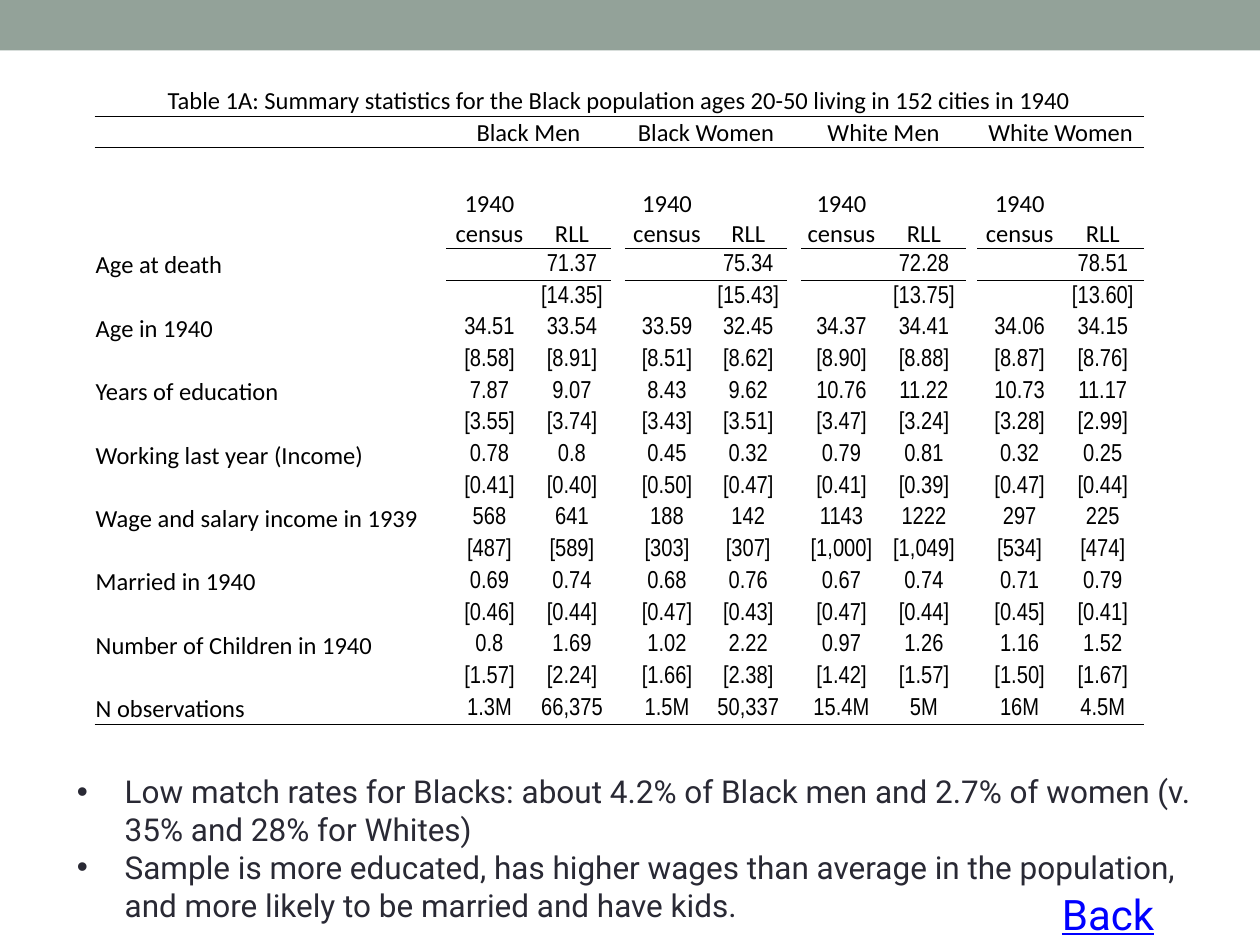
from lxml.etree import SubElement
from pptx import Presentation
from pptx.dml.color import RGBColor
from pptx.enum.shapes import MSO_SHAPE
from pptx.enum.text import MSO_ANCHOR, MSO_AUTO_SIZE, PP_ALIGN
from pptx.oxml import parse_xml
from pptx.oxml.ns import nsdecls, qn
from pptx.util import Inches, Pt

THEME = {
    "band": RGBColor.from_string("93A299"),
    "rule": "000000",
    "rule_pt": 0.5,
    "label": {"name": "Calibri", "size": Pt(14), "color": RGBColor(0, 0, 0)},
    "number": {"name": "Arial Narrow", "size": Pt(14), "color": RGBColor(0, 0, 0)},
    "bullet": {"name": "Roboto", "size": Pt(18), "color": RGBColor.from_string("292934")},
    "back": {"name": "Roboto", "size": Pt(24), "color": RGBColor.from_string("0000FF"),
             "underline": True},
}
NO_GRID_STYLE = "{2D5ABB26-0587-4C30-8999-92F81FD0307C}"

CAPTION = "Table 1A: Summary statistics for the Black population ages 20-50 living in 152 cities in 1940"
GROUPS = ["Black Men", "Black Women", "White Men", "White Women"]
SOURCES = ["1940 census", "RLL"]
STATS = [
    ("Age at death", ["", "71.37", "", "75.34", "", "72.28", "", "78.51"]),
    ("", ["", "[14.35]", "", "[15.43]", "", "[13.75]", "", "[13.60]"]),
    ("Age in 1940", ["34.51", "33.54", "33.59", "32.45", "34.37", "34.41", "34.06", "34.15"]),
    ("", ["[8.58]", "[8.91]", "[8.51]", "[8.62]", "[8.90]", "[8.88]", "[8.87]", "[8.76]"]),
    ("Years of education", ["7.87", "9.07", "8.43", "9.62", "10.76", "11.22", "10.73", "11.17"]),
    ("", ["[3.55]", "[3.74]", "[3.43]", "[3.51]", "[3.47]", "[3.24]", "[3.28]", "[2.99]"]),
    ("Working last year (Income)", ["0.78", "0.8", "0.45", "0.32", "0.79", "0.81", "0.32", "0.25"]),
    ("", ["[0.41]", "[0.40]", "[0.50]", "[0.47]", "[0.41]", "[0.39]", "[0.47]", "[0.44]"]),
    ("Wage and salary income in 1939", ["568", "641", "188", "142", "1143", "1222", "297", "225"]),
    ("", ["[487]", "[589]", "[303]", "[307]", "[1,000]", "[1,049]", "[534]", "[474]"]),
    ("Married in 1940", ["0.69", "0.74", "0.68", "0.76", "0.67", "0.74", "0.71", "0.79"]),
    ("", ["[0.46]", "[0.44]", "[0.47]", "[0.43]", "[0.47]", "[0.44]", "[0.45]", "[0.41]"]),
    ("Number of Children in 1940", ["0.8", "1.69", "1.02", "2.22", "0.97", "1.26", "1.16", "1.52"]),
    ("", ["[1.57]", "[2.24]", "[1.66]", "[2.38]", "[1.42]", "[1.57]", "[1.50]", "[1.67]"]),
    ("N observations", ["1.3M", "66,375", "1.5M", "50,337", "15.4M", "5M", "16M", "4.5M"]),
]
BULLETS = [
    "Low match rates for Blacks: about 4.2% of Black men and 2.7% of women (v. 35% and 28% for Whites)",
    "Sample is more educated, has higher wages than average in the population, "
    "and more likely to be married and have kids.",
]

COL_WIDTHS = [2.79, 0.69, 0.62, 0.11, 0.67, 0.62, 0.11, 0.64, 0.67, 0.09, 0.67, 0.65]
TABLE_BOX = (0.75, 0.67, 8.33, 5.08)
SOURCE_ROW_HEIGHT = 0.8
HEADER_ROWS = 3
N_ROWS, N_COLS = HEADER_ROWS + len(STATS), len(COL_WIDTHS)
GROUP_COLS = [1 + 3 * i for i in range(len(GROUPS))]
VALUE_COLS = [c + k for c in GROUP_COLS for k in range(len(SOURCES))]
RULED_COLS = {0: range(N_COLS), 1: VALUE_COLS, 2: VALUE_COLS, N_ROWS - 1: range(N_COLS)}


def apply_font(font, style):
    for key, value in style.items():
        if key == "color":
            font.color.rgb = value
        else:
            setattr(font, key, value)


def add_run(p, text, style):
    r = p.add_run()
    r.text = text
    apply_font(r.font, style)


def place(sp, left, top, width, height):
    for name, value in zip(("left", "top", "width", "height"), (left, top, width, height)):
        setattr(sp, name, Inches(value))


def add_rule(cell, tag):
    cell._tc.get_or_add_tcPr().insert(0, parse_xml(
        f'<a:{tag} {nsdecls("a")} w="{Pt(THEME["rule_pt"])}"><a:solidFill>'
        f'<a:srgbClr val="{THEME["rule"]}"/></a:solidFill></a:{tag}>'))


def format_cell(cell, text, style, align, anchor):
    margins = {"margin_left": 0.01, "margin_right": 0.01, "margin_top": 0.01, "margin_bottom": 0}
    for name, value in margins.items():
        setattr(cell, name, Inches(value))
    cell.vertical_anchor = anchor
    cell.fill.background()
    p = cell.text_frame.paragraphs[0]
    p.alignment = align
    if text:
        add_run(p, text, style)
    else:
        SubElement(p._p, qn("a:endParaRPr")).set("sz", str(int(style["size"].pt * 100)))


def table_texts():
    texts = {(0, 0): CAPTION}
    for group, col in zip(GROUPS, GROUP_COLS):
        texts[1, col] = group
        for k, source in enumerate(SOURCES):
            texts[2, col + k] = source
    for row, (label, values) in enumerate(STATS, HEADER_ROWS):
        texts[row, 0] = label
        texts.update({(row, col): value for col, value in zip(VALUE_COLS, values)})
    return texts


def add_stats_table(s):
    frame = s.shapes.add_table(N_ROWS, N_COLS, *map(Inches, TABLE_BOX))
    table = frame.table
    table._tbl.tblPr.find(qn("a:tableStyleId")).text = NO_GRID_STYLE
    table.first_row = table.horz_banding = False
    for col, width in zip(table.columns, COL_WIDTHS):
        col.width = Inches(width)
    row_height = (TABLE_BOX[3] - SOURCE_ROW_HEIGHT) / (N_ROWS - 1)
    for i, row in enumerate(table.rows):
        row.height = Inches(SOURCE_ROW_HEIGHT if i == 2 else row_height)

    table.cell(0, 0).merge(table.cell(0, N_COLS - 1))
    for col in GROUP_COLS:
        table.cell(1, col).merge(table.cell(1, col + 1))

    texts = table_texts()
    for row in range(N_ROWS):
        for col in range(N_COLS):
            cell = table.cell(row, col)
            is_number = row >= HEADER_ROWS and col > 0
            is_label = row >= HEADER_ROWS and col == 0
            format_cell(cell, texts.get((row, col), ""),
                        THEME["number" if is_number else "label"],
                        PP_ALIGN.LEFT if is_label else PP_ALIGN.CENTER,
                        MSO_ANCHOR.MIDDLE if is_number else MSO_ANCHOR.BOTTOM)
            if col in RULED_COLS.get(row, ()):
                add_rule(cell, "lnB")
            if col in RULED_COLS.get(row - 1, ()):
                add_rule(cell, "lnT")


def add_bullets(s):
    body = s.placeholders[1]
    place(body, 0.01, 6.08, 9.69, 1.72)
    tf = body.text_frame
    tf.auto_size = MSO_AUTO_SIZE.NONE
    tf.vertical_anchor = MSO_ANCHOR.TOP
    for i, text in enumerate(BULLETS):
        p = tf.add_paragraph() if i else tf.paragraphs[0]
        p.level = 1
        p.space_before = Pt(0)
        add_run(p, text, THEME["bullet"])
        pPr = p._p.get_or_add_pPr()
        pPr.set("marL", str(Inches(0.88)))
        pPr.set("indent", str(Inches(-0.38)))
        SubElement(pPr, qn("a:buFont")).set("typeface", "Arial")
        SubElement(pPr, qn("a:buChar")).set("char", "•")


def main():
    prs = Presentation()
    prs.slide_width, prs.slide_height = Inches(10), Inches(7.5)
    s = prs.slides.add_slide(prs.slide_layouts[1])
    title = s.shapes.title._element
    title.getparent().remove(title)

    band = s.shapes.add_shape(MSO_SHAPE.RECTANGLE, 0, 0, prs.slide_width, Inches(0.4))
    band.shadow.inherit = False
    band.fill.solid()
    band.fill.fore_color.rgb = THEME["band"]
    band.line.fill.background()

    add_stats_table(s)
    add_bullets(s)

    back = s.shapes.add_textbox(*map(Inches, (8.33, 7, 1.04, 0.5)))
    back.text_frame.word_wrap = False
    add_run(back.text_frame.paragraphs[0], "Back", THEME["back"])

    prs.save("out.pptx")


if __name__ == "__main__":
    main()
